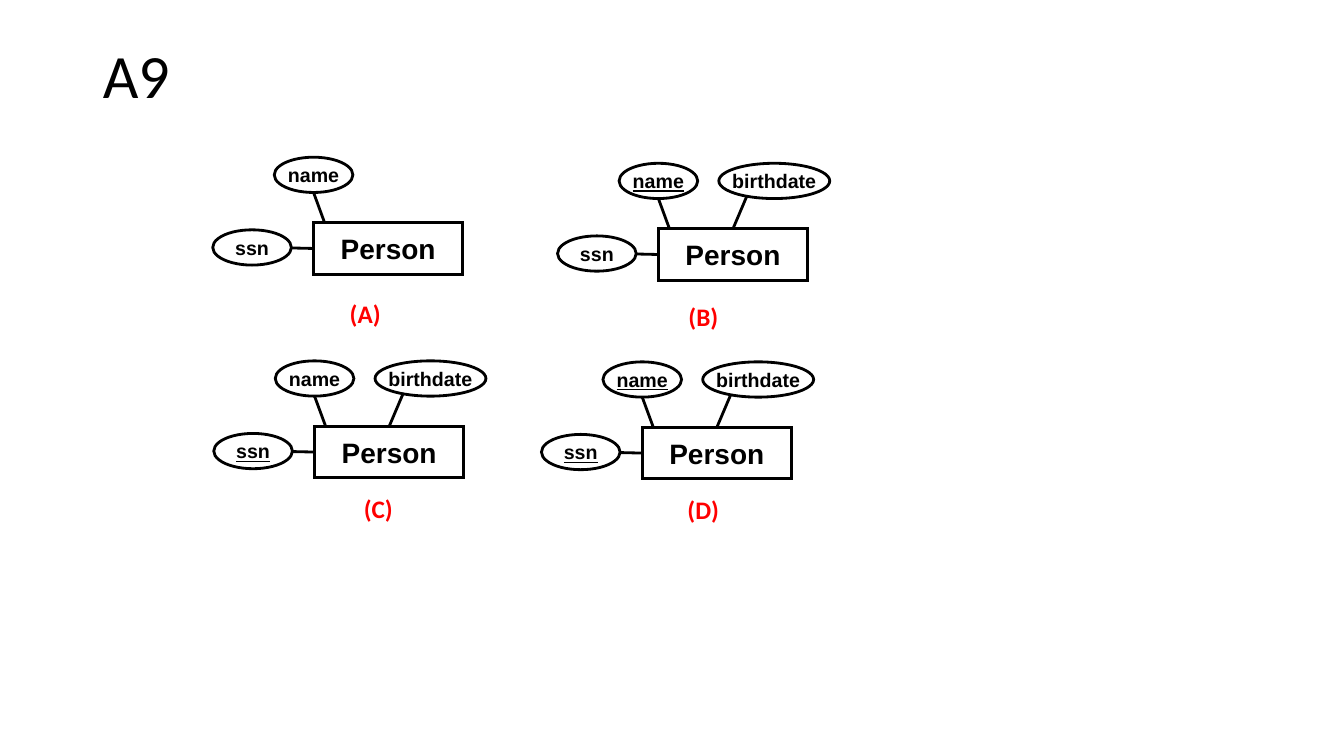
from pptx import Presentation
from pptx.dml.color import RGBColor
from pptx.enum.shapes import MSO_CONNECTOR, MSO_SHAPE
from pptx.enum.text import MSO_ANCHOR, MSO_AUTO_SIZE, PP_ALIGN
from pptx.oxml.ns import qn
from pptx.util import Inches, Pt

TITLE = "A9"
ENTITY = "Person"
# option label, label position, entity position, attributes shown, key attributes
OPTIONS = [
    ("(A)", (3.37, 2.91), (3.11, 2.21), ("ssn", "name"), ()),
    ("(B)", (6.73, 2.94), (6.53, 2.27), ("ssn", "name", "birthdate"), ("name",)),
    ("(C)", (3.51, 4.84), (3.12, 4.23), ("ssn", "name", "birthdate"), ("ssn",)),
    ("(D)", (6.72, 4.86), (6.37, 4.24), ("ssn", "name", "birthdate"), ("ssn", "name")),
]
# relative to the entity's top left corner: oval position, oval width, link start, link end
ATTRIBUTES = {
    "ssn": ((-1, 0.07), 0.78, (-0.22, 0.25), (0, 0.25)),
    "name": ((-0.39, -0.65), 0.78, (0, -0.3), (0.11, 0)),
    "birthdate": ((0.6, -0.65), 1.1, (0.88, -0.33), (0.74, 0)),
}
ENTITY_SIZE = (1.48, 0.51)
OVAL_HEIGHT = 0.35
LABEL_SIZE = (0.55, 0.4)
COLORS = {"ink": "000000", "label": "FF0000"}


def color(name):
    return RGBColor.from_string(COLORS[name])


def write(tf, text, size, font, ink="ink", bold=True, underline=None):
    p = tf.paragraphs[0]
    r = p.add_run()
    r.text = text
    f = r.font
    f.name, f.size, f.bold, f.underline = font, Pt(size), bold, underline
    f.color.rgb = color(ink)
    return p


def add_node(group, kind, pos, size, text, pt, underline=None):
    """Add an outlined shape with centred text and sharp corners."""
    sp = group.shapes.add_shape(kind, *map(Inches, (*pos, *size)))
    sp.shadow.inherit = False
    sp.fill.background()
    sp.line.color.rgb = color("ink")
    sp.line.width = Pt(2)
    ln = sp._element.spPr.find(qn("a:ln"))
    ln.append(ln.makeelement(qn("a:miter"), {"lim": "800000"}))
    tf = sp.text_frame
    tf.word_wrap = False
    tf.vertical_anchor = MSO_ANCHOR.MIDDLE
    write(tf, text, pt, "Arial", underline=underline).alignment = PP_ALIGN.CENTER
    return sp


def add_link(group, start, end):
    line = group.shapes.add_connector(MSO_CONNECTOR.STRAIGHT, *map(Inches, (*start, *end)))
    line.line.color.rgb = color("ink")
    line.line.width = Pt(2)
    sp_pr = line._element.spPr
    sp_pr.append(sp_pr.makeelement(qn("a:effectLst"), {}))
    return line


def add_diagram(slide, origin, attributes, keys):
    def place(offset):
        return origin[0] + offset[0], origin[1] + offset[1]

    group = slide.shapes.add_group_shape()
    entity = add_node(group, MSO_SHAPE.RECTANGLE, origin, ENTITY_SIZE, ENTITY, 20)
    for name in attributes:
        pos, width, start, end = ATTRIBUTES[name]
        add_node(group, MSO_SHAPE.OVAL, place(pos), (width, OVAL_HEIGHT), name, 14,
                 underline=True if name in keys else None)
        line = add_link(group, place(start), place(end))
        if name == "ssn":
            line.end_connect(entity, 1)


def add_label(slide, text, pos):
    tf = slide.shapes.add_textbox(*map(Inches, (*pos, *LABEL_SIZE))).text_frame
    tf.word_wrap = False
    tf.auto_size = MSO_AUTO_SIZE.NONE
    write(tf, text, 18, "Calibri", "label").alignment = PP_ALIGN.LEFT


def add_title(slide):
    title = slide.shapes.title
    title.left, title.top, title.width, title.height = map(Inches, (0.92, 0.4, 11.5, 1.45))
    tf = title.text_frame
    tf.vertical_anchor = MSO_ANCHOR.TOP
    tf.auto_size = MSO_AUTO_SIZE.NONE
    p = write(tf, TITLE, 44, "Calibri", bold=False)
    p.alignment = PP_ALIGN.LEFT
    p.line_spacing = 0.9


def main():
    prs = Presentation()
    prs.slide_width, prs.slide_height = Inches(13.33), Inches(7.5)
    slide = prs.slides.add_slide(prs.slide_layouts.get_by_name("Title Only"))
    add_title(slide)
    for label, label_pos, origin, attributes, keys in OPTIONS:
        add_diagram(slide, origin, attributes, keys)
        add_label(slide, label, label_pos)
    prs.save("out.pptx")


if __name__ == "__main__":
    main()
